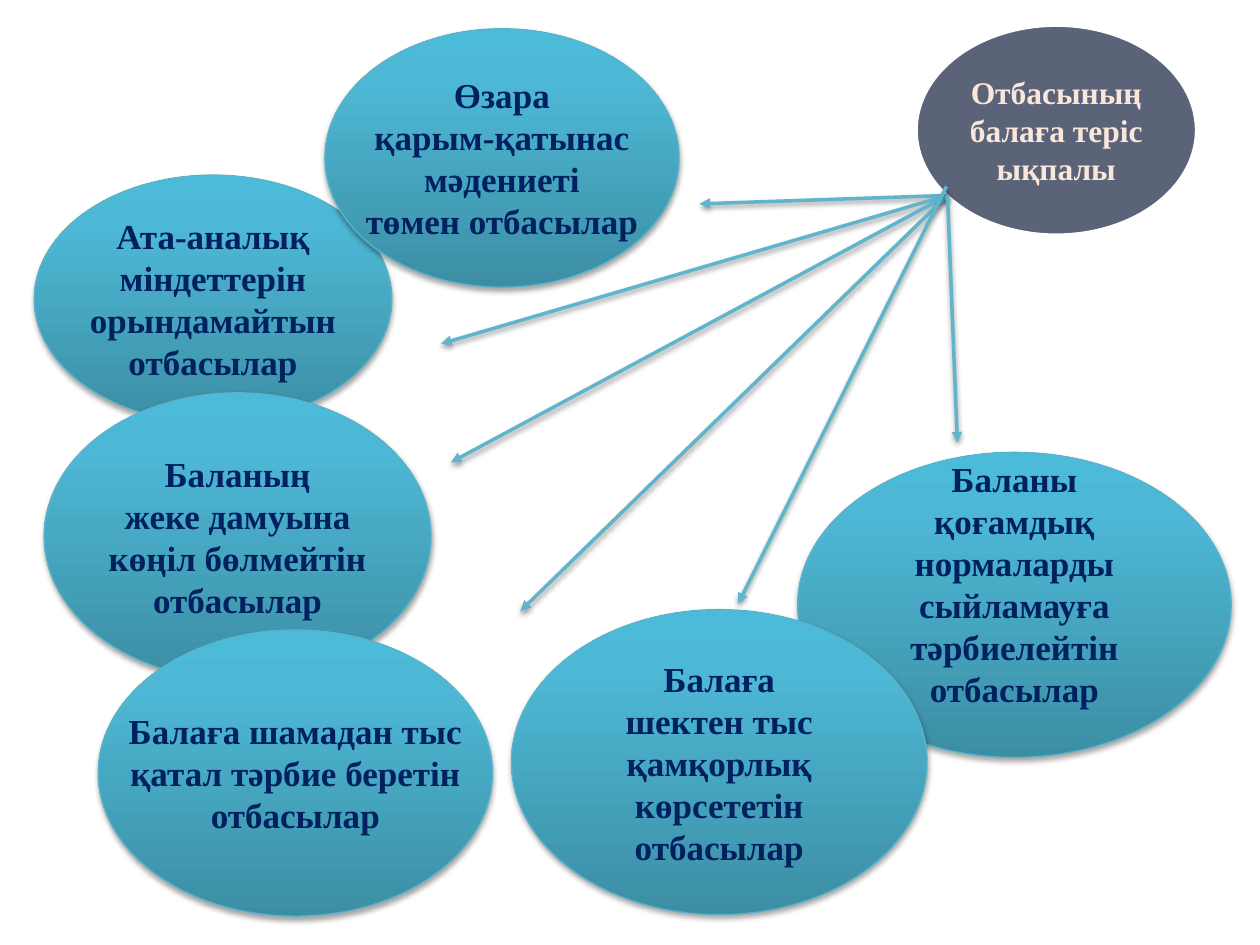
from typing import NamedTuple

from lxml.etree import SubElement
from pptx import Presentation
from pptx.dml.color import RGBColor
from pptx.enum.shapes import MSO_CONNECTOR as Connector, MSO_SHAPE as Shape
from pptx.enum.text import MSO_ANCHOR as Anchor, PP_ALIGN as Align
from pptx.oxml import parse_xml
from pptx.oxml.ns import nsdecls, qn
from pptx.util import Cm, Pt

COLORS = {
    "topic": "5A6378",
    "topic_line": "FFFFFF",
    "topic_text": "FAE7DC",
    "family_line": "5BB3CA",
    "family_text": "002060",
    "arrow": "60B5CC",
    "shadow": "000000",
}
# Position in percent -> colour, from the bottom of the ellipse to its top
GRADIENT = {0: "3C8EA4", 80: "4DB8D5", 100: "4BBBD9"}
FONT = "Times New Roman"


class Ellipse(NamedTuple):
    left: float
    top: float
    width: float
    height: float
    lines: list[str]
    bottom_margin: float = 0.13


class Arrow(NamedTuple):
    end: tuple[float, float]
    start: tuple[float, float] = (19.1, 3.94)


TOPIC = Ellipse(18.49, 0.53, 5.61, 4.19, ["Отбасының", "балаға теріс", "ықпалы"])

FAMILIES = [
    Ellipse(0.69, 3.53, 7.21, 5.0,
            ["Ата-аналық", "міндеттерін", "орындамайтын", "отбасылар"]),
    Ellipse(6.55, 0.58, 7.14, 5.21,
            ["Өзара", "қарым-қатынас", "мәдениеті", "төмен отбасылар"]),
    Ellipse(0.89, 7.92, 7.8, 5.79,
            ["Баланың", "жеке дамуына", "көңіл бөлмейтін", "отбасылар"]),
    Ellipse(1.98, 12.7, 7.95, 5.77,
            ["Балаға шамадан тыс", "қатал тәрбие беретін", "отбасылар"]),
    Ellipse(16.08, 9.12, 8.74, 6.15,
            ["Баланы", "қоғамдық", "нормаларды", "сыйламауға", "тәрбиелейтін",
             "отбасылар"], bottom_margin=0.97),
]
FRONT_FAMILY = Ellipse(10.31, 12.29, 8.38, 6.15,
                       ["Балаға", "шектен тыс", "қамқорлық", "көрсететін",
                        "отбасылар"])

ARROWS = [
    Arrow((14.1, 4.11)),
    Arrow((8.89, 6.93)),
    Arrow((9.09, 9.32)),
    Arrow((10.49, 12.32)),
    Arrow((14.88, 12.17), start=(19.08, 3.76)),
    Arrow((19.3, 8.92)),
]


def color(name: str) -> RGBColor:
    return RGBColor.from_string(COLORS[name])


def add_shadow(properties, distance: float, opacity: int) -> None:
    """Give a shape or connector a soft shadow straight below it."""
    effects = properties.find(qn("a:effectLst"))
    if effects is None:
        effects = SubElement(properties, qn("a:effectLst"))
    effects.append(parse_xml(
        f'<a:outerShdw {nsdecls("a")} blurRad="{Pt(3.1)}" dist="{Pt(distance)}" '
        f'dir="5400000" rotWithShape="0"><a:srgbClr val="{COLORS["shadow"]}">'
        f'<a:alpha val="{opacity * 1000}"/></a:srgbClr></a:outerShdw>'))


def add_gradient(properties) -> None:
    """Put the upward gradient right after the geometry."""
    stops = "".join(
        f'<a:gs pos="{position * 1000}"><a:srgbClr val="{value}"/></a:gs>'
        for position, value in GRADIENT.items())
    properties.find(qn("a:prstGeom")).addnext(parse_xml(
        f'<a:gradFill {nsdecls("a")} rotWithShape="1"><a:gsLst>{stops}</a:gsLst>'
        '<a:lin ang="16200000" scaled="0"/></a:gradFill>'))


def write_text(frame, lines: list[str], *, size: int, font_color: str) -> None:
    """Write one centred bold paragraph per line."""
    frame.word_wrap = False
    frame.vertical_anchor = Anchor.MIDDLE
    for index, text in enumerate(lines):
        paragraph = frame.add_paragraph() if index else frame.paragraphs[0]
        paragraph.alignment = Align.CENTER
        run = paragraph.add_run()
        run.text = text
        run.font.name = FONT
        run.font.size = Pt(size)
        run.font.bold = True
        run.font.color.rgb = color(font_color)


def add_ellipse(slide, ellipse: Ellipse, *, size: int, style: str):
    shape = slide.shapes.add_shape(
        Shape.OVAL, Cm(ellipse.left), Cm(ellipse.top),
        Cm(ellipse.width), Cm(ellipse.height))
    shape.shadow.inherit = False
    shape.line.color.rgb = color(f"{style}_line")
    shape.line.width = Pt(0.75)
    shape.text_frame.margin_bottom = Cm(ellipse.bottom_margin)
    write_text(shape.text_frame, ellipse.lines, size=size, font_color=f"{style}_text")
    return shape


def add_topic(slide, ellipse: Ellipse) -> None:
    shape = add_ellipse(slide, ellipse, size=18, style="topic")
    shape.fill.solid()
    shape.fill.fore_color.rgb = color("topic")


def add_family(slide, ellipse: Ellipse) -> None:
    shape = add_ellipse(slide, ellipse, size=20, style="family")
    properties = shape.element.spPr
    add_gradient(properties)
    add_shadow(properties, distance=1.8, opacity=35)


def add_arrow(slide, arrow: Arrow) -> None:
    connector = slide.shapes.add_connector(
        Connector.STRAIGHT, *(Cm(value) for value in arrow.start + arrow.end))
    connector.line.color.rgb = color("arrow")
    connector.line.width = Pt(2)
    properties = connector.element.spPr
    SubElement(properties.find(qn("a:ln")), qn("a:tailEnd"), type="triangle")
    add_shadow(properties, distance=1.6, opacity=38)


def main() -> None:
    presentation = Presentation()
    presentation.slide_width = Cm(25.4)
    presentation.slide_height = Cm(19.05)
    slide = presentation.slides.add_slide(presentation.slide_layouts[6])

    # Topic and the family types behind the arrows
    add_topic(slide, TOPIC)
    for family in FAMILIES:
        add_family(slide, family)

    # Arrows from the topic to each family type
    for arrow in ARROWS:
        add_arrow(slide, arrow)

    # Family type in front
    add_family(slide, FRONT_FAMILY)
    presentation.save("out.pptx")


if __name__ == "__main__":
    main()
